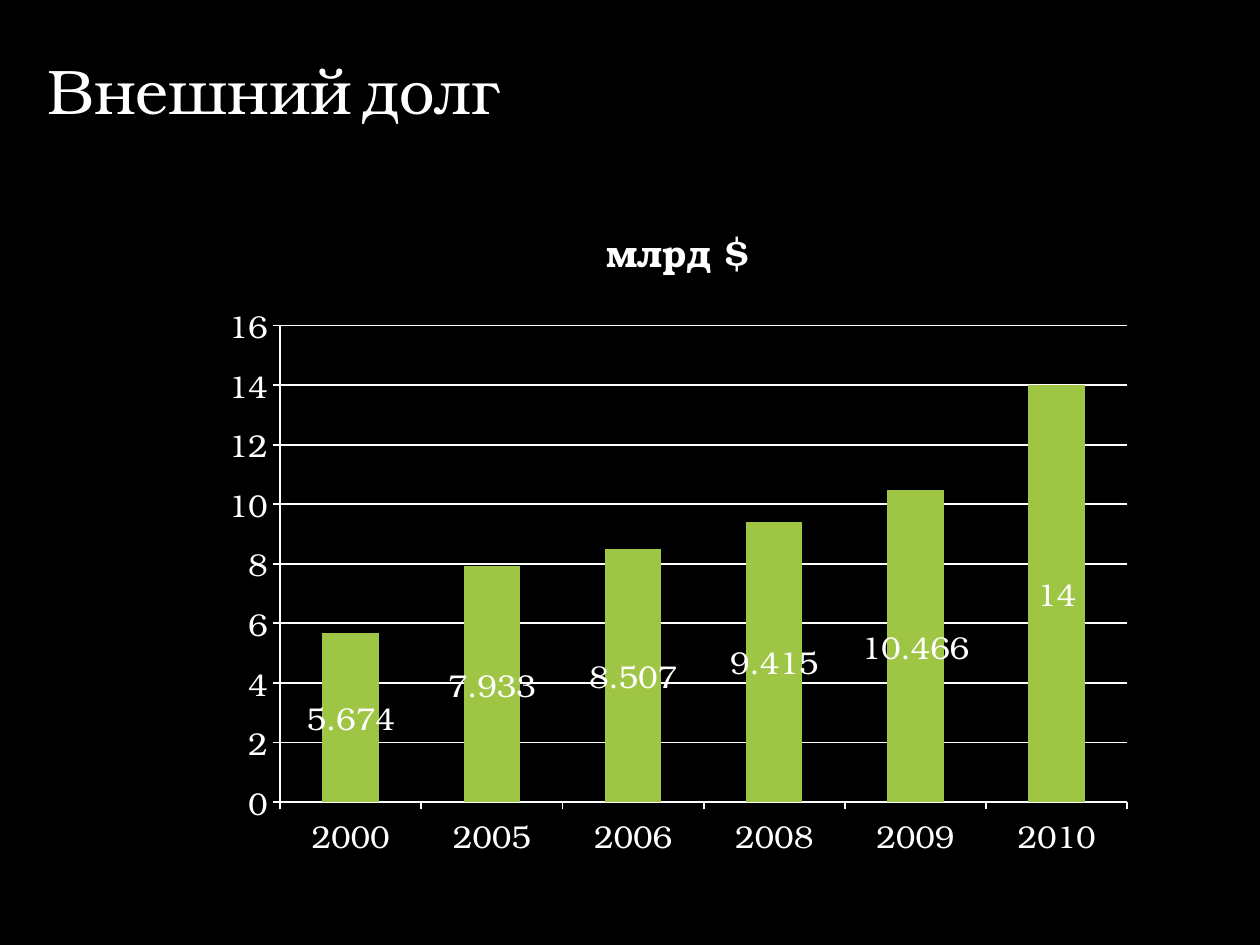
from dataclasses import dataclass

from pptx import Presentation
from pptx.chart import data as cd
from pptx.dml.color import RGBColor
from pptx.enum import chart as ch, text
from pptx.util import Pt

PX = 914400 / 126  # EMU in one px


@dataclass(frozen=True)
class Theme:
    face: str = "TeX Gyre Bonum"
    back: str = "000000"
    ink: str = "FFFFFF"
    bar: str = "9EC544"
    head: float = 36
    cap: float = 21.6
    body: float = 18
    rule: float = 1


THEME = Theme()
YEARS = ("2000", "2005", "2006", "2008", "2009", "2010")
DEBT = (5.674, 7.933, 8.507, 9.415, 10.466, 14)
UNIT = "млрд $"


def px(*vals):
    return [round(v * PX) for v in vals]


def put(item, **vals):
    for name, val in vals.items():
        setattr(item, name, val)


def paint(fill, tone):
    fill.solid()
    fill.fore_color.rgb = RGBColor.from_string(tone)


def style(font, size, bold=False):
    put(font, name=THEME.face, size=Pt(size), bold=bold)
    font.color.rgb = RGBColor.from_string(THEME.ink)


def rule(line):
    line.width = Pt(THEME.rule)
    paint(line.fill, THEME.ink)


def add_title(slide, box, runs):
    shape = slide.shapes.title
    put(shape, **dict(zip(("left", "top", "width", "height"), px(*box))))
    frame = shape.text_frame
    put(frame, word_wrap=False, auto_size=text.MSO_AUTO_SIZE.NONE,
        vertical_anchor=text.MSO_ANCHOR.MIDDLE)
    par = frame.paragraphs[0]
    par.alignment = text.PP_ALIGN.LEFT
    for word, size in runs:
        run = par.add_run()
        run.text = word
        style(run.font, size)


def add_bars(slide, box):
    data = cd.CategoryChartData()
    data.categories = YEARS
    data.add_series(UNIT, DEBT)
    kind = ch.XL_CHART_TYPE.COLUMN_STACKED
    chart = slide.shapes.add_chart(kind, *px(*box), data).chart
    style(chart.font, THEME.body)
    put(chart, has_legend=False, has_title=True)

    # Caption above the plot
    par = chart.chart_title.text_frame.paragraphs[0]
    run = par.add_run()
    run.text = UNIT
    style(run.font, THEME.cap, bold=True)

    # Axes and grid
    for axis in (chart.category_axis, chart.value_axis):
        put(axis, major_tick_mark=ch.XL_TICK_MARK.OUTSIDE,
            minor_tick_mark=ch.XL_TICK_MARK.NONE)
        rule(axis.format.line)
        style(axis.tick_labels.font, THEME.body)
    put(chart.value_axis, has_major_gridlines=True, minimum_scale=0,
        maximum_scale=16, major_unit=2)
    rule(chart.value_axis.major_gridlines.format.line)

    # Bars and their values
    plot = chart.plots[0]
    put(plot, gap_width=150, overlap=100, vary_by_categories=False,
        has_data_labels=True)
    paint(plot.series[0].format.fill, THEME.bar)
    tags = plot.data_labels
    put(tags, show_value=True, position=ch.XL_LABEL_POSITION.CENTER)
    style(tags.font, THEME.body)


def main():
    deck = Presentation()
    deck.slide_width, deck.slide_height = px(1260, 945)
    slide = deck.slides.add_slide(deck.slide_layouts[5])
    paint(slide.background.fill, THEME.back)
    add_title(slide, (35, 45, 484, 89),
              (("Внешний", THEME.head), (" ", THEME.body), ("долг", THEME.head)))
    add_bars(slide, (210, 193, 936, 677))
    deck.save("out.pptx")


if __name__ == "__main__":
    main()
